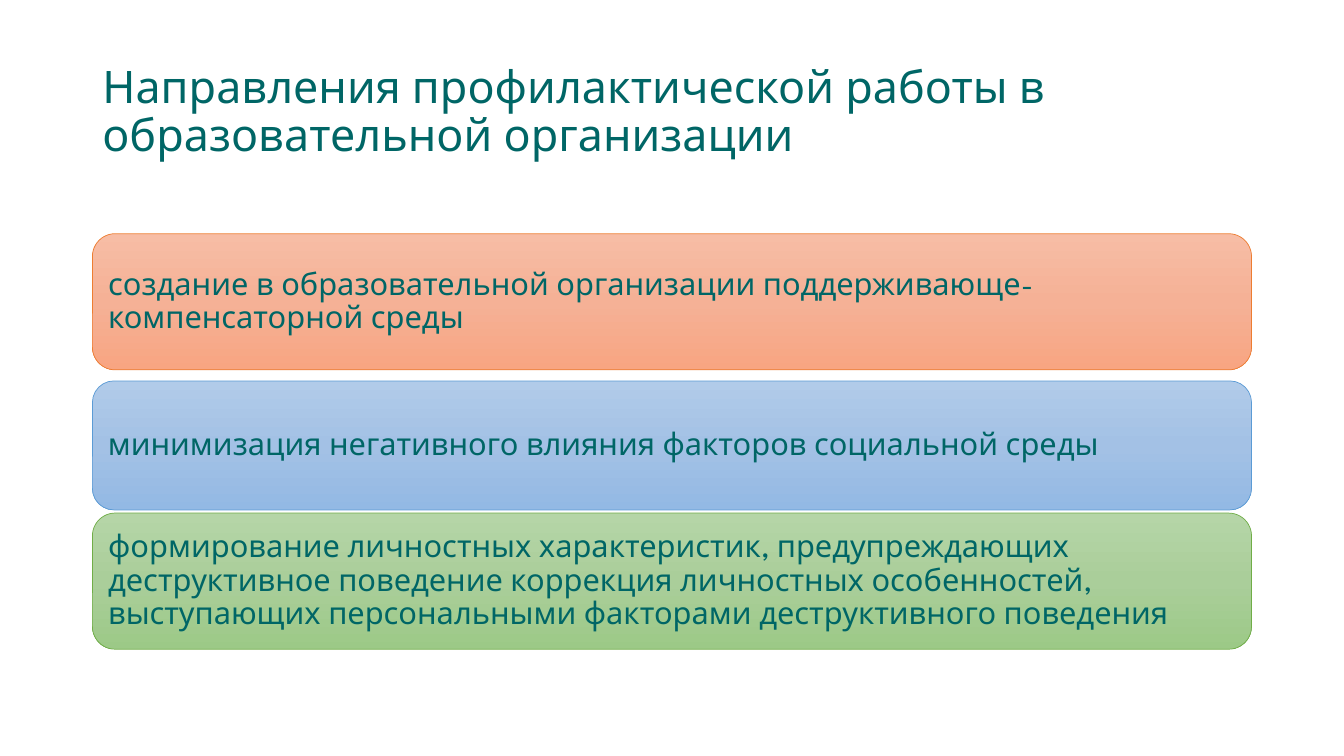
from copy import deepcopy

from pptx import Presentation
from pptx.dml.color import RGBColor
from pptx.enum.shapes import MSO_SHAPE as SHAPE
from pptx.enum.text import MSO_ANCHOR as ANCHOR, PP_ALIGN as ALIGN
from pptx.oxml.ns import qn
from pptx.util import Cm, Pt

FONT = "League Spartan"
TEAL = RGBColor(0x00, 0x66, 0x66)
ORANGE = RGBColor(0xED, 0x7D, 0x31)
ORANGE_STOPS = (RGBColor(0xF7, 0xBD, 0xA5), RGBColor(0xF5, 0xB1, 0x96), RGBColor(0xF8, 0xA5, 0x82))
BLUE = RGBColor(0x5B, 0x9B, 0xD5)
BLUE_STOPS = (RGBColor(0xB1, 0xCB, 0xE9), RGBColor(0xA3, 0xC1, 0xE5), RGBColor(0x93, 0xB9, 0xE4))
GREEN = RGBColor(0x70, 0xAD, 0x47)
GREEN_STOPS = (RGBColor(0xB5, 0xD5, 0xA7), RGBColor(0xAA, 0xCE, 0x9A), RGBColor(0x9C, 0xC9, 0x87))

LEFT, WIDTH = Cm(2.33), Cm(29.21)
TITLE = "Направления профилактической работы в образовательной организации"
DIRECTIONS = (
    (5.89, 3.43, ORANGE, ORANGE_STOPS,
     "создание в образовательной организации поддерживающе-компенсаторной среды"),
    (9.6, 3.25, BLUE, BLUE_STOPS,
     "минимизация негативного влияния факторов социальной среды"),
    (12.93, 3.43, GREEN, GREEN_STOPS,
     "формирование личностных характеристик, предупреждающих деструктивное поведение "
     "коррекция личностных особенностей, выступающих персональными факторами "
     "деструктивного поведения"),
)


def set_text(tf, text, size):
    tf.text = text
    tf.word_wrap = True
    tf.vertical_anchor = ANCHOR.MIDDLE
    p = tf.paragraphs[0]
    p.alignment = ALIGN.LEFT
    p.line_spacing = 0.9
    r = p.runs[0]
    r.font.name = FONT
    r.font.size = Pt(size)
    r.font.color.rgb = TEAL


def set_gradient(s, colors):
    s.fill.gradient()
    s.fill.gradient_angle = 270
    stops = s._element.spPr.find(qn("a:gradFill")).find(qn("a:gsLst"))
    stops.insert(1, deepcopy(stops[0]))
    for i, (stop, color) in enumerate(zip(s.fill.gradient_stops, colors)):
        stop.position = i / 2
        stop.color.rgb = color


def add_title(slide):
    sp = slide.shapes.add_textbox(LEFT, Cm(1.01), WIDTH, Cm(3.68))
    set_text(sp.text_frame, TITLE, 32)


def add_direction(slide, top, height, line, colors, text):
    s = slide.shapes.add_shape(SHAPE.ROUNDED_RECTANGLE, LEFT, Cm(top), WIDTH, Cm(height))
    s.shadow.inherit = False
    set_gradient(s, colors)
    s.line.color.rgb = line
    s.line.width = Pt(0.5)
    tf = s.text_frame
    set_text(tf, text, 22)
    tf.margin_left = tf.margin_right = tf.margin_top = tf.margin_bottom = Cm(0.23)


def main():
    prs = Presentation()
    prs.slide_width, prs.slide_height = Cm(33.87), Cm(19.05)
    slide = prs.slides.add_slide(prs.slide_layouts[6])
    add_title(slide)
    for direction in DIRECTIONS:
        add_direction(slide, *direction)
    prs.save("out.pptx")


if __name__ == "__main__":
    main()
